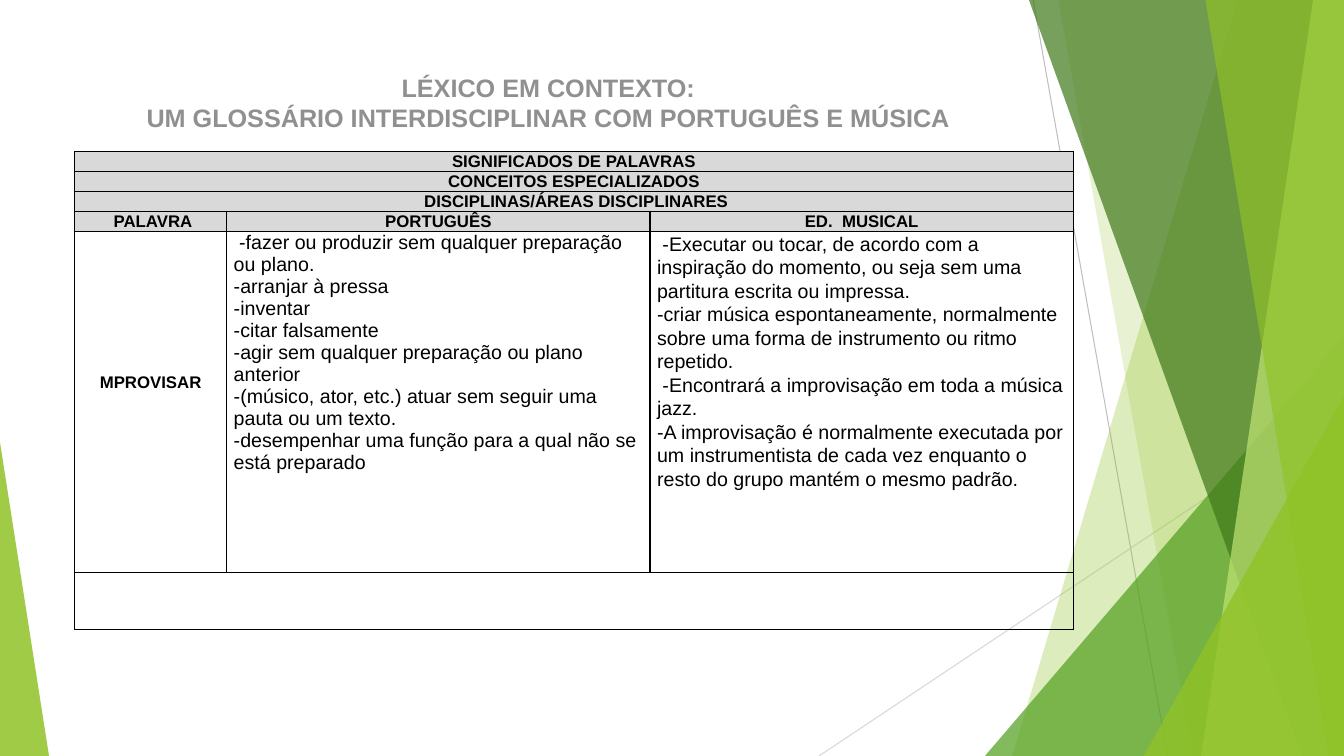
from lxml.etree import SubElement
from pptx import Presentation
from pptx.dml.color import RGBColor
from pptx.enum.shapes import MSO_CONNECTOR, MSO_SHAPE
from pptx.enum.text import MSO_ANCHOR, PP_ALIGN
from pptx.oxml.ns import qn
from pptx.util import Pt

WIDTH, HEIGHT = 960, 540
TITLE = ["LÉXICO EM CONTEXTO:", "UM GLOSSÁRIO INTERDISCIPLINAR COM PORTUGUÊS E MÚSICA"]
BANNERS = ["SIGNIFICADOS DE PALAVRAS", "CONCEITOS ESPECIALIZADOS", " DISCIPLINAS/ÁREAS DISCIPLINARES"]
HEADINGS = [" PALAVRA", "PORTUGUÊS", "ED.  MUSICAL"]
PORTUGUESE_MEANINGS = [
    " -fazer ou produzir sem qualquer preparação ou plano.",
    "-arranjar à pressa",
    "-inventar",
    "-citar falsamente",
    "-agir sem qualquer preparação ou plano anterior",
    "-(músico, ator, etc.) atuar sem seguir uma pauta ou um texto.",
    "-desempenhar uma função para a qual não se está preparado",
]
MUSIC_MEANINGS = [
    " -Executar ou tocar, de acordo com a inspiração do momento, ou seja sem uma partitura escrita ou impressa.",
    "-criar música espontaneamente, normalmente sobre uma forma de instrumento ou ritmo repetido.",
    " -Encontrará a improvisação em toda a música jazz.",
    "-A improvisação é normalmente executada por um instrumentista de cada vez enquanto o resto do grupo mantém o mesmo padrão.",
]


def colour(code):
    """Turn a hex string into a colour."""
    return RGBColor.from_string(code)


class GlossarySlide:
    """Hold the style and the current slide."""

    font = "Arial"
    ink = "000000"
    heading_fill = "D9D9D9"

    def __init__(self, presentation):
        """Add a slide that has only a title."""
        self.slide = presentation.slides.add_slide(presentation.slide_layouts[5])
        self.shapes = self.slide.shapes

    def run(self, paragraph, text, size, code, bold=False):
        """Add one formatted run."""
        run = paragraph.add_run()
        run.text = text
        run.font.name = self.font
        run.font.size = Pt(size)
        run.font.bold = bold
        run.font.color.rgb = colour(code)

    def title(self, lines, left, top, width, height):
        """Place the title with its line breaks."""
        title = self.shapes.title
        title.left, title.top, title.width, title.height = map(Pt, (left, top, width, height))
        frame = title.text_frame
        frame.word_wrap = True
        frame.vertical_anchor = MSO_ANCHOR.TOP
        paragraph = frame.paragraphs[0]
        paragraph.alignment = PP_ALIGN.CENTER
        for index, line in enumerate(lines):
            if index:
                paragraph.add_line_break()
            self.run(paragraph, line, 18, "909090", True)

    def thin_line(self, x1, y1, x2, y2, code):
        """Draw a thin line without shadow."""
        line = self.shapes.add_connector(MSO_CONNECTOR.STRAIGHT, *map(Pt, (x1, y1, x2, y2)))
        line.line.color.rgb = colour(code)
        line.line.width = Pt(0.75)
        SubElement(line._element.spPr, qn("a:effectLst"))

    def paint(self, shape, code, opacity):
        """Give a shape a translucent fill and no outline."""
        shape.shadow.inherit = False
        shape.line.fill.background()
        shape.fill.solid()
        shape.fill.fore_color.rgb = colour(code)
        fill_colour = shape._element.spPr.find(qn("a:solidFill"))[0]
        SubElement(fill_colour, qn("a:alpha"), val=str(opacity * 1000))

    def ribbon(self, top_x, bottom_x, code, opacity):
        """Fill from a slanted left edge to the right slide edge."""
        outline = self.shapes.build_freeform(Pt(top_x), 0)
        corners = [(WIDTH, 0), (WIDTH, HEIGHT), (bottom_x, HEIGHT)]
        outline.add_line_segments([(Pt(x), Pt(y)) for x, y in corners])
        self.paint(outline.convert_to_shape(), code, opacity)

    def wedge(self, left, top, width, apex, code, opacity):
        """Draw a triangle that stands on the bottom slide edge."""
        wedge = self.shapes.add_shape(
            MSO_SHAPE.ISOSCELES_TRIANGLE, *map(Pt, (left, top, width, HEIGHT - top)))
        wedge.adjustments[0] = apex
        self.paint(wedge, code, opacity)

    def table(self, left, top, columns, rows):
        """Add a plain table with black borders."""
        frame = self.shapes.add_table(
            len(rows), len(columns), *map(Pt, (left, top, sum(columns), sum(rows))))
        table = frame.table
        table.first_row = table.horz_banding = False
        for column, width in zip(table.columns, columns):
            column.width = Pt(width)
        for row, height in zip(table.rows, rows):
            row.height = Pt(height)
        for cell in table.iter_cells():
            self.border(cell)
            cell.fill.background()
            cell.margin_left = cell.margin_right = Pt(5)
            cell.margin_top = cell.margin_bottom = 0
        return table

    def border(self, cell):
        """Draw all four borders of a cell."""
        properties = cell._tc.get_or_add_tcPr()
        for side in ("a:lnL", "a:lnR", "a:lnT", "a:lnB"):
            edge = SubElement(properties, qn(side), w=str(Pt(1)))
            SubElement(SubElement(edge, qn("a:solidFill")), qn("a:srgbClr"), val=self.ink)

    def heading(self, cell, text, fill=heading_fill):
        """Write a bold centred heading in a cell."""
        if fill:
            cell.fill.solid()
            cell.fill.fore_color.rgb = colour(fill)
        paragraph = cell.text_frame.paragraphs[0]
        paragraph.alignment = PP_ALIGN.CENTER
        self.run(paragraph, text, 12, self.ink, True)

    def meanings(self, cell, texts, spacing):
        """Write one paragraph for each meaning."""
        frame = cell.text_frame
        for index, text in enumerate(texts):
            paragraph = frame.add_paragraph() if index else frame.paragraphs[0]
            paragraph.line_spacing = spacing
            self.run(paragraph, text, 14, self.ink)


def main():
    """Build and save the glossary slide."""
    presentation = Presentation()
    presentation.slide_width, presentation.slide_height = Pt(WIDTH), Pt(HEIGHT)
    page = GlossarySlide(presentation)

    page.thin_line(738, 0, 834, HEIGHT, "BFBFBF")
    page.thin_line(WIDTH, 290, 585, HEIGHT, "D9D9D9")
    page.ribbon(884, 723, "90C226", 30)
    page.ribbon(756, 852, "90C226", 20)
    page.wedge(703.5, 240, 256.5, 1, "54A021", 72)
    page.ribbon(735, 930, "3F7819", 70)
    page.ribbon(938, 858, "C0E474", 70)
    page.ribbon(861, 949, "90C226", 65)
    page.wedge(817, 283, 143, 1, "90C226", 80)
    page.wedge(0, 316, 35, 0, "90C226", 85)

    page.title(TITLE, 53.3, 48.2, 676.8, 103.7)
    glossary = page.table(53.3, 108.4, [108.7, 302.4, 302.4], [14.3] * 4 + [243.4, 41])
    for row in (0, 1, 2, 5):
        glossary.cell(row, 0).merge(glossary.cell(row, 2))
    for row, banner in enumerate(BANNERS):
        page.heading(glossary.cell(row, 0), banner)
    for column, heading in enumerate(HEADINGS):
        page.heading(glossary.cell(3, column), heading)

    word = glossary.cell(4, 0)
    word.vertical_anchor = MSO_ANCHOR.MIDDLE
    word.margin_bottom = Pt(28)
    page.heading(word, "MPROVISAR", None)
    page.meanings(glossary.cell(4, 1), PORTUGUESE_MEANINGS, 1.0)
    page.meanings(glossary.cell(4, 2), MUSIC_MEANINGS, 1.07)

    presentation.save("out.pptx")


if __name__ == "__main__":
    main()
